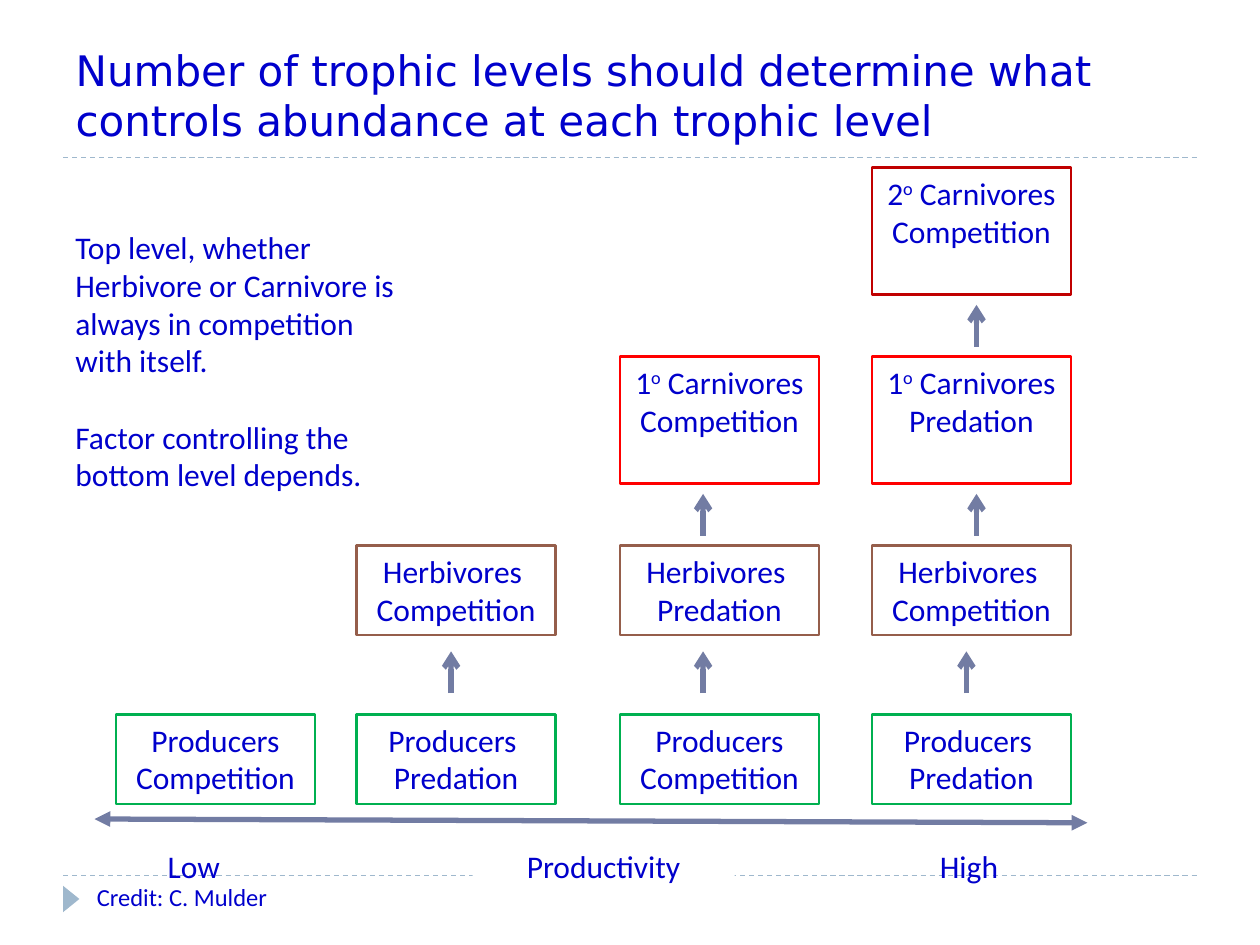
from lxml import etree
from pptx import Presentation
from pptx.dml.color import RGBColor
from pptx.enum.dml import MSO_LINE_DASH_STYLE as DASH
from pptx.enum.shapes import MSO_CONNECTOR, MSO_SHAPE
from pptx.enum.text import MSO_ANCHOR, PP_ALIGN
from pptx.oxml.ns import qn
from pptx.util import Inches, Pt

COLORS = {
    "text": "0000CC", "rule": "9FB8CD", "arrow": "727CA3", "white": "FFFFFF",
    "producer": "00B050", "herbivore": "955E4B",
    "carnivore1": "FF0000", "carnivore2": "C00000",
}
TITLE = ("Number of trophic levels should determine what controls "
         "abundance at each trophic level")
NOTES = ["Top level, whether Herbivore or Carnivore is always in competition with itself.",
         "Factor controlling the bottom level depends."]
CREDIT = "Credit: C. Mulder"

# A "^" pair encloses superscript text.
PRODUCERS_COMPETE = ["Producers Competition"]
PRODUCERS_PREDATED = ["Producers ", "Predation"]
HERBIVORES_COMPETE = ["Herbivores ", "Competition"]
HERBIVORES_PREDATED = ["Herbivores ", "Predation"]
# Food chains from low to high productivity, each listed from the bottom up
CHAINS = [
    [PRODUCERS_COMPETE],
    [PRODUCERS_PREDATED, HERBIVORES_COMPETE],
    [PRODUCERS_COMPETE, HERBIVORES_PREDATED, ["1^o^ Carnivores", "Competition"]],
    [PRODUCERS_PREDATED, HERBIVORES_COMPETE, ["1^o^ Carnivores", "Predation"],
     ["2^o^ Carnivores", "Competition"]],
]
CHAIN_LEFTS = [0.92, 2.83, 4.92, 6.92]
LEVELS = [("producer", 5.67, 0.71), ("herbivore", 4.33, 0.71),
          ("carnivore1", 2.83, 1.01), ("carnivore2", 1.33, 1.01)]
BOX_WIDTH = 1.58
# Arrow x positions and foot for each step up to the next level
STEPS = [(5.5, [3.58, 5.58, 7.67]), (4.25, [5.58, 7.75]), (2.75, [7.75])]
ARROW_LENGTH = 0.33


def rgb(name):
    return RGBColor.from_string(COLORS[name])


def write(sp, paragraphs, size=18, font="Calibri", align=PP_ALIGN.LEFT,
          anchor=MSO_ANCHOR.TOP, gap=0, indent=0.1):
    tf = sp.text_frame
    tf.word_wrap = True
    tf.vertical_anchor = anchor
    tf.margin_left = Inches(indent)
    for i, text in enumerate(paragraphs):
        p = tf.paragraphs[0] if i == 0 else tf.add_paragraph()
        p.alignment = align
        p.space_before = Pt(gap if i else 0)
        for j, part in enumerate(text.split("^")):
            r = p.add_run()
            r.text = part
            r.font.size = Pt(size)
            r.font.name = font
            r.font.color.rgb = rgb("text")
            if j % 2:
                r.font._element.set("baseline", "30000")


def add_text(slide, at, paragraphs, **fmt):
    write(slide.shapes.add_textbox(*map(Inches, at)), paragraphs, **fmt)


def add_shape(slide, kind, at, fill=None, line=None):
    sp = slide.shapes.add_shape(kind, *map(Inches, at))
    sp.shadow.inherit = False
    if fill:
        sp.fill.solid()
        sp.fill.fore_color.rgb = rgb(fill)
    else:
        sp.fill.background()
    if line:
        sp.line.color.rgb = rgb(line)
        sp.line.width = Pt(1.5)
    else:
        sp.line.fill.background()
    return sp


def add_line(slide, start, end, color="arrow", width=3, dash=None, head=None, tail=None):
    cn = slide.shapes.add_connector(MSO_CONNECTOR.STRAIGHT, *map(Inches, start + end))
    cn.line.color.rgb = rgb(color)
    cn.line.width = Pt(width)
    if dash:
        cn.line.dash_style = dash
    ln = cn.line._get_or_add_ln()
    for tag, style in (("a:headEnd", head), ("a:tailEnd", tail)):
        if style:
            etree.SubElement(ln, qn(tag)).set("type", style)
    etree.SubElement(cn._element.spPr, qn("a:effectLst"))


def main():
    prs = Presentation()
    prs.slide_width, prs.slide_height = Inches(10), Inches(7.5)
    slide = prs.slides.add_slide(prs.slide_layouts[5])

    for y in (6.95, 1.25):
        add_line(slide, (0.5, y), (9.5, y), "rule", 0.75, DASH.DASH)
    marker = add_shape(slide, MSO_SHAPE.ISOSCELES_TRIANGLE, (0.46, 7.07, 0.21, 0.13), "rule")
    marker.rotation = 90

    title = slide.shapes.title
    title.left, title.top, title.width, title.height = map(Inches, (0.5, 0.25, 9, 1))
    write(title, [TITLE], size=24, font="DejaVu Sans", anchor=MSO_ANCHOR.MIDDLE)

    add_line(slide, (0.75, 6.5), (8.63, 6.53), head="triangle", tail="triangle")
    axis = add_shape(slide, MSO_SHAPE.RECTANGLE, (3.75, 6.67, 2.08, 0.42), "white")
    write(axis, ["Productivity"], align=PP_ALIGN.CENTER)
    add_text(slide, (1, 6.67, 1.25, 0.42), ["Low"], indent=0.33)
    add_text(slide, (7.25, 6.67, 1.17, 0.4), ["High"], indent=0.21)

    for left, chain in zip(CHAIN_LEFTS, CHAINS):
        for (color, top, height), label in zip(LEVELS, chain):
            box = add_shape(slide, MSO_SHAPE.RECTANGLE, (left, top, BOX_WIDTH, height),
                            line=color)
            write(box, label, align=PP_ALIGN.CENTER)

    for foot, xs in STEPS:
        for x in xs:
            add_line(slide, (x, foot), (x, foot - ARROW_LENGTH), tail="arrow")

    add_text(slide, (0.5, 1.76, 2.75, 2.22), NOTES, gap=22)
    add_text(slide, (0.67, 6.95, 2.17, 0.4), [CREDIT], size=14)
    prs.save("out.pptx")


if __name__ == "__main__":
    main()
